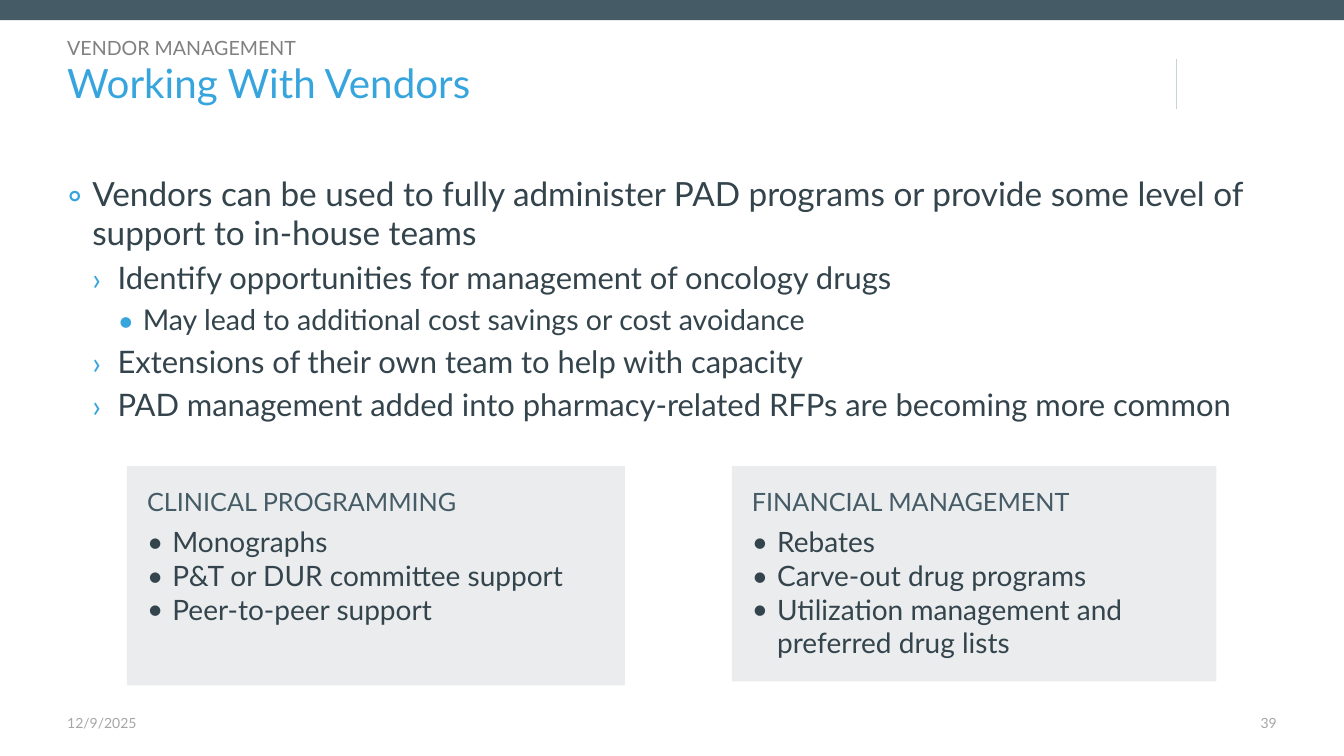
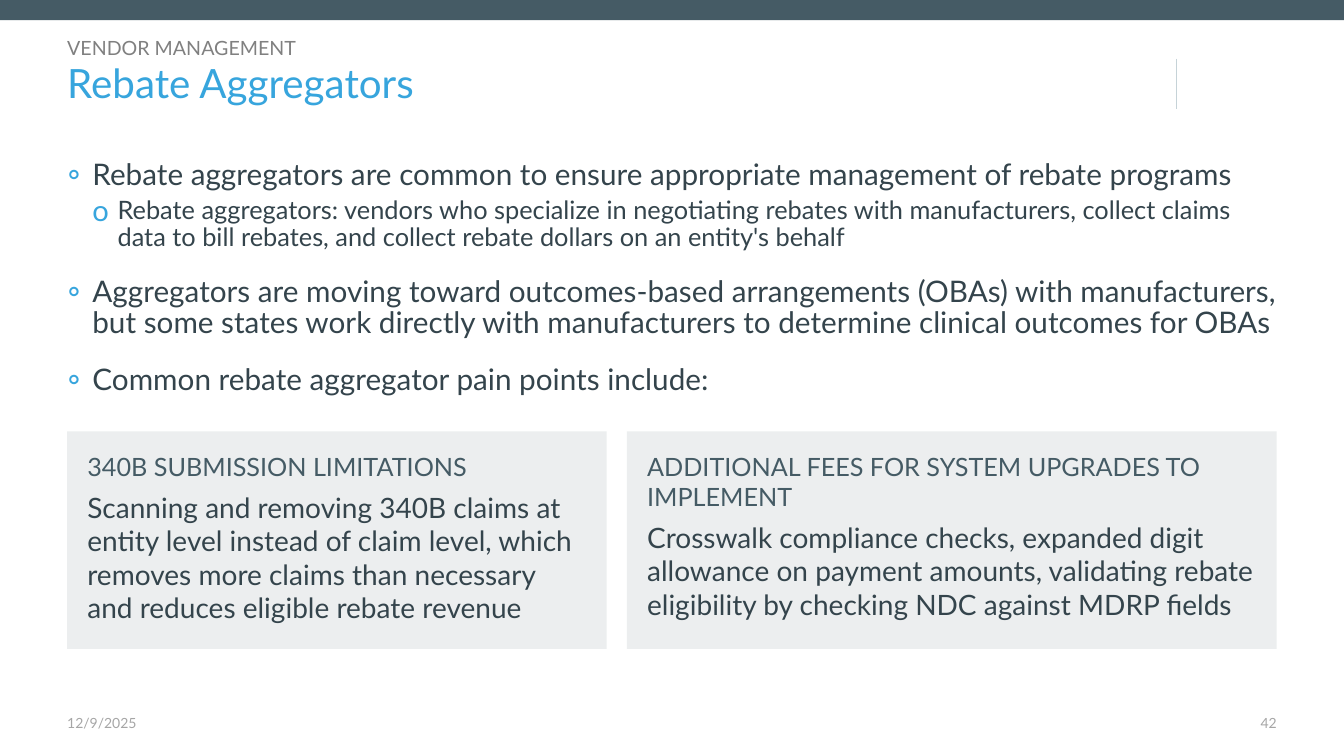
from lxml import etree
from pptx import Presentation
from pptx import util as u
from pptx.dml.color import RGBColor
from pptx.enum import shapes, text
from pptx.oxml.ns import qn

COLORS = {"slate": "455B65", "blue": "37A5DD", "ink": "34444C", "rule": "C6D3D8",
          "kicker": "808080", "footer": "A6A6A6"}
FONT = "Lato"
STEP = 0.25  # hanging indent of one bullet level, in inches

presentation = Presentation()
presentation.slide_width, presentation.slide_height = u.Inches(13.33), u.Inches(7.5)
COLUMN = presentation.slide_width / 20
ROW = presentation.slide_height / 20


def place(left, top, width, height):
    """Turn columns and rows of the 20 x 20 grid into lengths."""
    return [round(n * unit) for n, unit in
            zip((left, top, width, height), (COLUMN, ROW, COLUMN, ROW))]


def write(shape, paragraphs, insets=(0, 0, 0, 0), anchor=text.MSO_ANCHOR.TOP):
    """Fill a shape with (text, style) paragraphs; insets are left, top, right, bottom."""
    frame = shape.text_frame
    frame.word_wrap = True
    frame.auto_size = text.MSO_AUTO_SIZE.NONE
    frame.vertical_anchor = anchor
    frame.margin_left, frame.margin_top, frame.margin_right, frame.margin_bottom = map(
        u.Inches, insets)
    for index, (words, style) in enumerate(paragraphs):
        paragraph = frame.add_paragraph() if index else frame.paragraphs[0]
        paragraph.text = words
        if "mark" in style:
            level = style.get("level", 0)
            properties = paragraph._p.get_or_add_pPr()
            properties.set("marL", str(u.Inches(STEP * (level + 1))))
            properties.set("indent", str(u.Inches(-STEP)))
            paragraph.level = level
            bullet_color = etree.SubElement(properties, qn("a:buClr"))
            etree.SubElement(bullet_color, qn("a:srgbClr"),
                             val=COLORS[style.get("mark_color", "blue")])
            etree.SubElement(properties, qn("a:buSzPct"),
                             val=str(style.get("mark_size", 100) * 1000))
            etree.SubElement(properties, qn("a:buFont"), typeface=FONT)
            etree.SubElement(properties, qn("a:buChar"), char=style["mark"])
        paragraph.alignment = style.get("align", text.PP_ALIGN.LEFT)
        paragraph.line_spacing = style.get("line", 1.0)
        paragraph.space_before = u.Pt(style.get("before", 0) if index else 0)
        paragraph.space_after = u.Pt(style.get("after", 0))
        paragraph.font.name = FONT
        paragraph.font.size = u.Pt(style["size"])
        paragraph.font.color.rgb = RGBColor.from_string(COLORS[style.get("color", "ink")])


TITLE = {"size": 28.8, "color": "blue", "line": 0.9}
KICKER = {"size": 14, "color": "kicker", "line": 1.08}
DATE = {"size": 10, "color": "footer"}
NUMBER = {**DATE, "align": text.PP_ALIGN.RIGHT}
HEADING = {"size": 18, "color": "slate", "after": 6}
PLAIN = {"size": 20}
ITEM = {**PLAIN, "mark": "•", "mark_color": "ink"}

# Body styles: roomy for the first slide, tight for the second
ROOMY = {"size": 23.8, "line": 0.98, "before": 18, "mark": "◦", "mark_size": 115}
ROOMY_SUB = {"size": 22.1, "line": 0.98, "before": 5, "mark": "›", "level": 1}
ROOMY_DETAIL = {**ROOMY_SUB, "size": 20.4, "mark": "•", "level": 2}
TIGHT = {**ROOMY, "size": 21.2, "line": 0.88}
TIGHT_SUB = {**TIGHT, "size": 18.1, "before": 5, "mark": "o", "level": 1}

SLIDES = [
    {
        "title": "Working With Vendors",
        "number": "39",
        "body_at": (1, 4.5, 18, 7.4),
        "body": [
            ("Vendors can be used to fully administer PAD programs or provide some level "
             "of support to in-house teams", ROOMY),
            ("Identify opportunities for management of oncology drugs", ROOMY_SUB),
            ("May lead to additional cost savings or cost avoidance", ROOMY_DETAIL),
            ("Extensions of their own team to help with capacity", ROOMY_SUB),
            ("PAD management added into pharmacy-related RFPs are becoming more common",
             ROOMY_SUB),
        ],
        "opacity": 11,
        "boxes": [
            ((1.89, 12.33, 7.41, 5.8), "CLINICAL PROGRAMMING", ITEM,
             ["Monographs", "P&T or DUR committee support", "Peer-to-peer support"]),
            ((10.89, 12.33, 7.21, 5.7), "FINANCIAL MANAGEMENT", ITEM,
             ["Rebates", "Carve-out drug programs",
              "Utilization management and preferred drug lists"]),
        ],
    },
    {
        "title": "Rebate Aggregators",
        "number": "42",
        "body_at": (1, 4.1, 18, 7.3),
        "body": [
            ("Rebate aggregators are common to ensure appropriate management of rebate "
             "programs", TIGHT),
            ("Rebate aggregators: vendors who specialize in negotiating rebates with "
             "manufacturers, collect claims data to bill rebates, and collect rebate "
             "dollars on an entity's behalf", TIGHT_SUB),
            ("Aggregators are moving toward outcomes-based arrangements (OBAs) with "
             "manufacturers, but some states work directly with manufacturers to "
             "determine clinical outcomes for OBAs", TIGHT),
            ("Common rebate aggregator pain points include:", TIGHT),
        ],
        "opacity": 10,
        "boxes": [
            ((1, 11.41, 8.03, 5.76), "340B SUBMISSION LIMITATIONS", PLAIN,
             ["Scanning and removing 340B claims at entity level instead of claim level, "
              "which removes more claims than necessary and reduces eligible rebate "
              "revenue"]),
            ((9.33, 11.41, 9.67, 5.76), "ADDITIONAL FEES FOR SYSTEM UPGRADES TO IMPLEMENT",
             PLAIN,
             ["Crosswalk compliance checks, expanded digit allowance on payment amounts, "
              "validating rebate eligibility by checking NDC against MDRP fields"]),
        ],
    },
]

for content in SLIDES:
    slide = presentation.slides.add_slide(presentation.slide_layouts[5])

    # Top band and header divider
    band = slide.shapes.add_shape(shapes.MSO_SHAPE.RECTANGLE, *place(0, 0, 20, 0.53))
    band.shadow.inherit = False
    band.fill.solid()
    band.fill.fore_color.rgb = RGBColor.from_string(COLORS["slate"])
    band.line.fill.background()
    divider = slide.shapes.add_connector(shapes.MSO_CONNECTOR.STRAIGHT,
                                         *place(17.5, 1.55, 17.5, 2.88))
    divider.line.color.rgb = RGBColor.from_string(COLORS["rule"])
    divider.line.width = u.Pt(0.25)
    etree.SubElement(divider._element.spPr, qn("a:effectLst"))

    # Title
    title = slide.shapes.title
    title.left, title.top, title.width, title.height = place(1, 1.57, 15.75, 1.33)
    write(title, [(content["title"], TITLE)], (0, 0.07, 0, 0.05), text.MSO_ANCHOR.MIDDLE)

    # Section name, body and footer
    for area, paragraphs, insets, anchor in (
        ((1, 0.93, 7.73, 0.6), [("VENDOR MANAGEMENT", KICKER)],
         (0, 0.05, 0, 0.05), text.MSO_ANCHOR.MIDDLE),
        (content["body_at"], content["body"], (0, 0.05, 0, 0.05), text.MSO_ANCHOR.TOP),
        ((1, 18.9, 3, 0.6), [("12/9/2025", DATE)], (0, 0, 0, 0), text.MSO_ANCHOR.TOP),
        ((17.5, 18.9, 1.5, 0.6), [(content["number"], NUMBER)],
         (0, 0, 0, 0), text.MSO_ANCHOR.TOP),
    ):
        write(slide.shapes.add_textbox(*place(*area)), paragraphs, insets, anchor)

    # Tinted boxes
    for area, heading, style, lines in content["boxes"]:
        box = slide.shapes.add_shape(shapes.MSO_SHAPE.RECTANGLE, *place(*area))
        box.shadow.inherit = False
        box.fill.solid()
        box.fill.fore_color.rgb = RGBColor.from_string(COLORS["slate"])
        tint = box._element.spPr.find(qn("a:solidFill")).find(qn("a:srgbClr"))
        etree.SubElement(tint, qn("a:alpha"), val=str(content["opacity"] * 1000))
        box.line.fill.background()
        write(box, [(heading, HEADING)] + [(line, style) for line in lines], (0.2,) * 4)

presentation.save("out.pptx")
